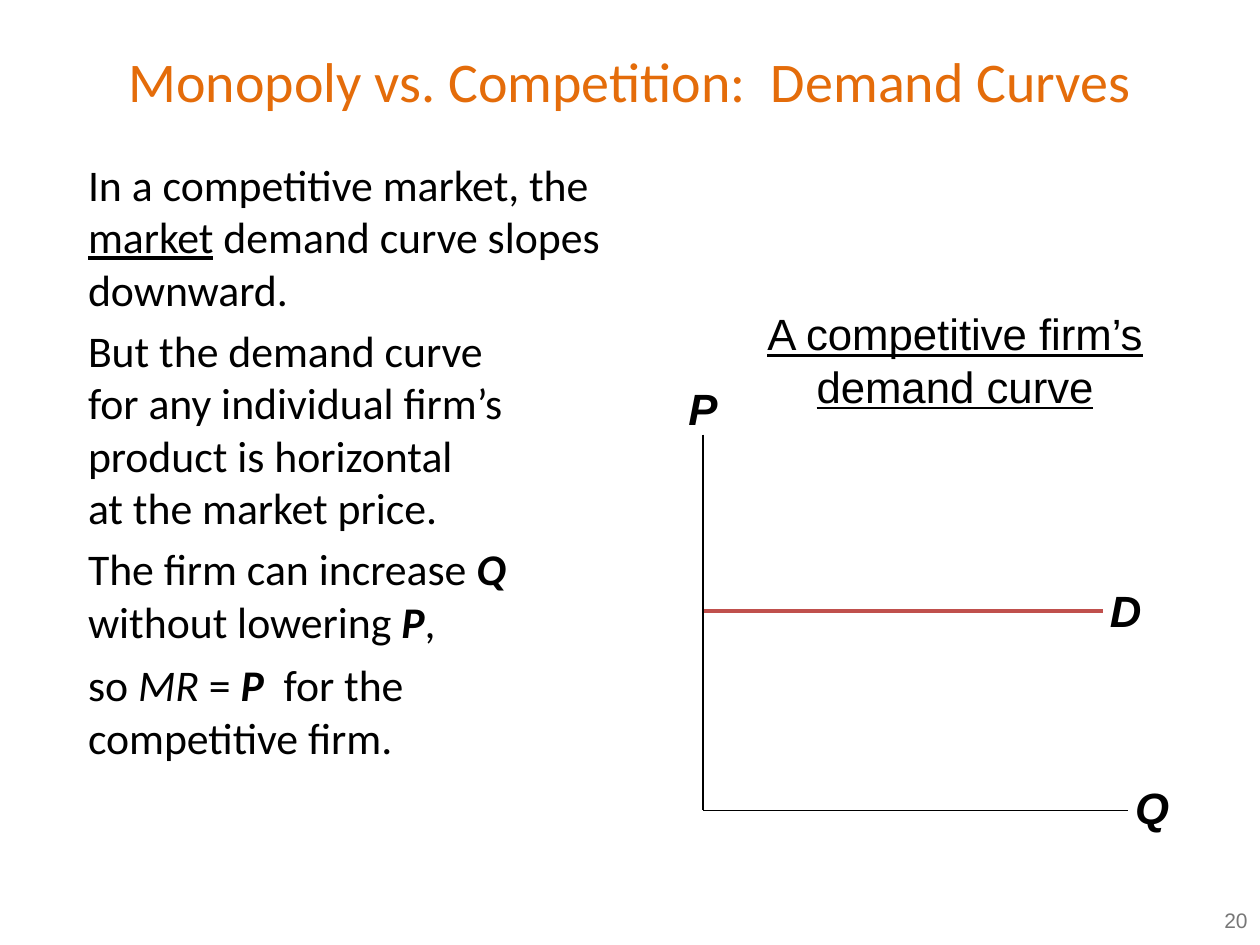
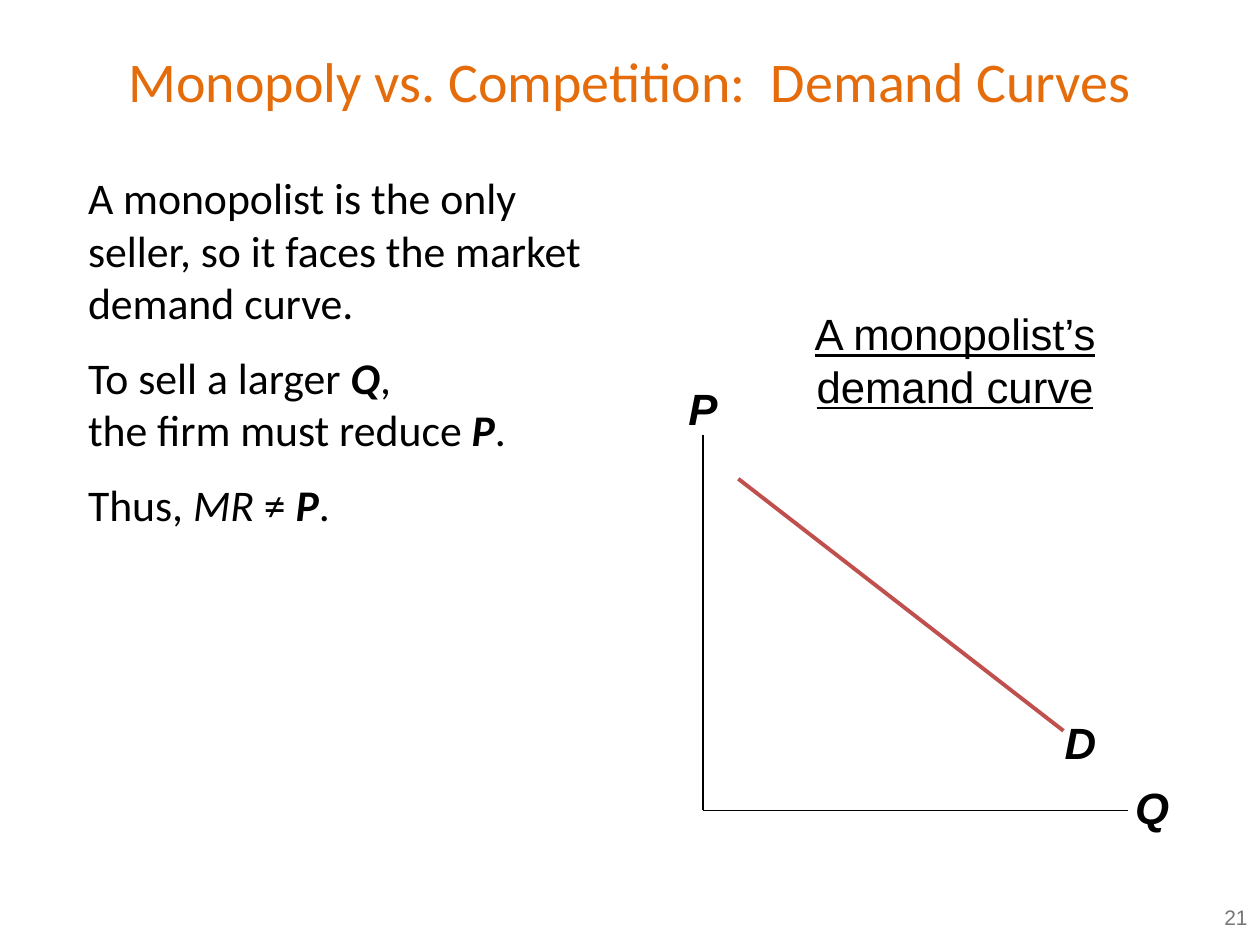
from lxml import etree
from pptx import Presentation
from pptx.dml.color import RGBColor
from pptx.enum.shapes import MSO_CONNECTOR
from pptx.enum.text import MSO_ANCHOR, PP_ALIGN
from pptx.oxml.ns import qn
from pptx.util import Pt

COLORS = {"title": "E46C0A", "text": "000000", "number": "777777",
          "axis": "000000", "demand": "C0504D"}
TITLE = "Monopoly vs. Competition:  Demand Curves"
ORIGIN, P_TOP, Q_END = (401.8, 463), (401.8, 248.4), (644.4, 463)

# Each run is (text, style): b bold, i italic, u underlined
SLIDES = [
    {"number": "20", "number_top": 511.2,
     "body_box": (43.2, 86.4, 309, 408), "gaps": [0, 5, 5, 6.25],
     "body": [
         [("In a competitive market, the ", ""), ("market", "u"),
          (" demand curve slopes downward.", "")],
         [("But the demand curve \nfor any individual firm’s product is horizontal "
           "\nat the market price.", "")],
         [("The firm can increase ", ""), ("Q", "bi"), (" without lowering ", ""),
          ("P", "bi"), (",", "")],
         [("so ", ""), ("MR", "i"), (" = ", ""), ("P", "bi"),
          ("  for the competitive firm.", "")]],
     "demand": ((401.8, 349.2), (630, 349.2)), "d_at": (634.3, 333.4),
     "caption": "A competitive firm’s demand curve"},
    {"number": "21", "number_top": 509.8,
     "body_box": (43.2, 94.3, 309, 389.5), "gaps": [0, 12.5, 12.5],
     "body": [
         [("A monopolist is the only seller, so it faces the market demand curve.", "")],
         [("To sell a larger ", ""), ("Q", "bi"), (", \nthe firm must reduce ", ""),
          ("P", "bi"), (".", "")],
         [("Thus, ", ""), ("MR", "i"), (" ≠ ", ""), ("P", "bi"), (".", "")]],
     "demand": ((421.9, 273.6), (607.7, 417.6)), "d_at": (608.4, 409),
     "caption": "A monopolist’s demand curve"},
]


def add_text(shapes, box, paragraphs, size=25, font="Arial", color="text",
             align=PP_ALIGN.LEFT, anchor=MSO_ANCHOR.TOP, gaps=(0,), inset=True):
    sp = shapes.add_textbox(*[Pt(v) for v in box])
    tf = sp.text_frame
    tf.word_wrap = True
    tf.vertical_anchor = anchor
    if not inset:
        tf.margin_left = tf.margin_right = tf.margin_top = tf.margin_bottom = 0
    for i, (runs, gap) in enumerate(zip(paragraphs, gaps)):
        p = tf.add_paragraph() if i else tf.paragraphs[0]
        p.alignment = align
        p.space_before = Pt(gap)
        for text, style in runs:
            for j, part in enumerate(text.split("\n")):
                if j:
                    p.add_line_break()
                r = p.add_run()
                r.text = part
                r.font.name, r.font.size = font, Pt(size)
                r.font.color.rgb = RGBColor.from_string(COLORS[color])
                r.font.bold, r.font.italic = "b" in style, "i" in style
                r.font.underline = "u" in style


def add_line(shapes, start, end, color, width):
    ln = shapes.add_connector(MSO_CONNECTOR.STRAIGHT, *[Pt(v) for v in start + end])
    ln.line.color.rgb = RGBColor.from_string(COLORS[color])
    ln.line.width = Pt(width)
    etree.SubElement(ln._element.spPr, qn("a:effectLst"))


prs = Presentation()
prs.slide_width, prs.slide_height = Pt(720), Pt(540)

for data in SLIDES:
    s = prs.slides.add_slide(prs.slide_layouts[6])

    # Page number, title and body
    add_text(s.shapes, (437.8, data["number_top"], 282.2, 28.8), [[(data["number"], "")]],
             size=12, color="number", align=PP_ALIGN.RIGHT, anchor=MSO_ANCHOR.MIDDLE)
    add_text(s.shapes, (0, 20.2, 720, 51), [[(TITLE, "")]], size=32, font="Calibri",
             color="title", align=PP_ALIGN.CENTER, anchor=MSO_ANCHOR.MIDDLE)
    add_text(s.shapes, data["body_box"], data["body"], font="Calibri", gaps=data["gaps"])

    # Demand curve with its label
    curve = s.shapes.add_group_shape().shapes
    add_line(curve, *data["demand"], "demand", 2.25)
    add_text(curve, data["d_at"] + (23.8, 30.2), [[("D", "bi")]], inset=False)

    # Price and quantity axes
    axes = s.shapes.add_group_shape().shapes
    for start, end in ((P_TOP, ORIGIN), (ORIGIN, Q_END)):
        add_line(axes, start, end, "axis", 0.75)
    add_text(axes, (383, 214.6, 37.4, 37.4), [[("P", "bi")]], align=PP_ALIGN.CENTER)
    add_text(axes, (641.5, 442.8, 42.5, 37.4), [[("Q", "bi")]])

    # Graph caption
    add_text(s.shapes, (429.8, 172, 231.8, 67), [[(data["caption"], "u")]],
             align=PP_ALIGN.CENTER)

prs.save("out.pptx")
